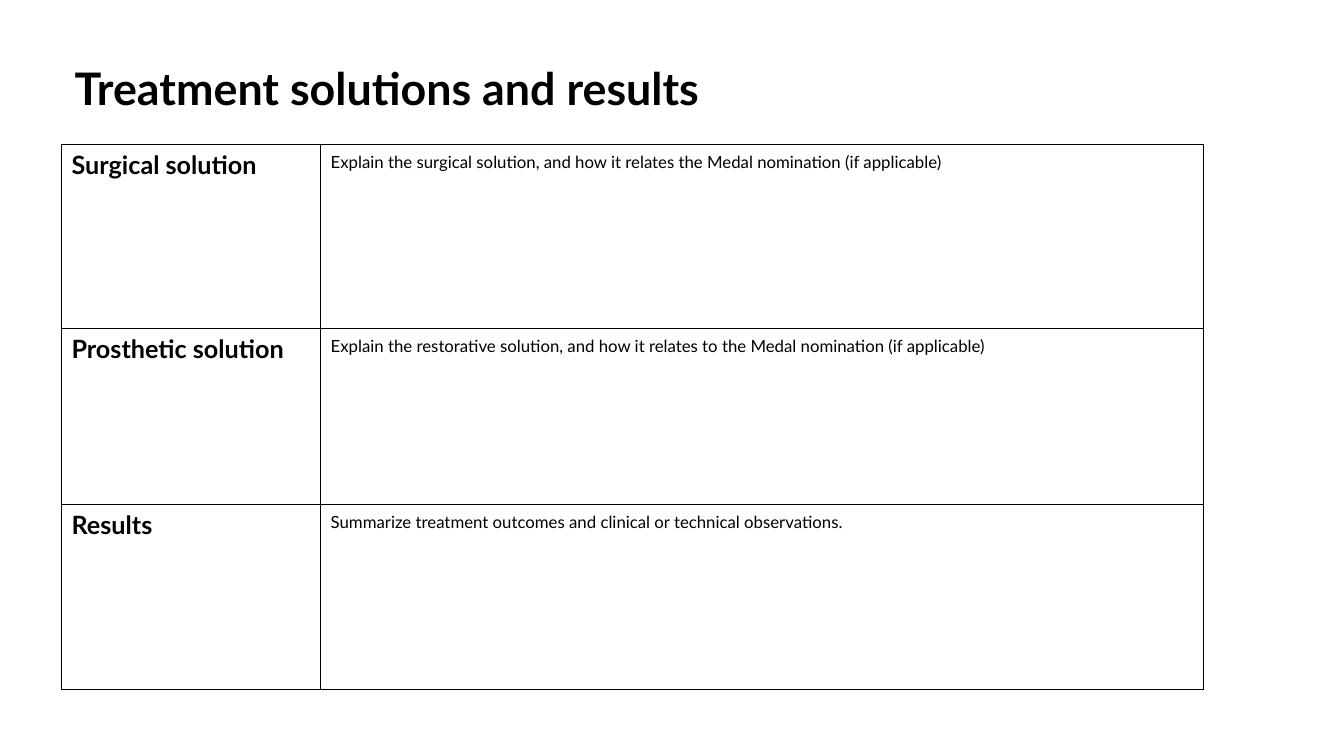
from lxml import etree
from pptx import Presentation
from pptx.dml.color import RGBColor
from pptx.enum.text import MSO_ANCHOR
from pptx.oxml.ns import qn
from pptx.util import Cm, Pt

MIDDLE = MSO_ANCHOR.MIDDLE
BLACK = RGBColor(0x00, 0x00, 0x00)
WHITE = RGBColor(0xFF, 0xFF, 0xFF)

TITLE_FONT = {"name": "Lato", "size": Pt(32), "bold": True}
LABEL_FONT = {"name": "Lato", "size": Pt(18), "bold": True}
PROMPT_FONT = {"name": "Lato", "size": Pt(12), "bold": False}

COLUMN_WIDTHS = [6.53, 22.25]
ROW_HEIGHTS = [4.64, 4.43, 4.67]
SECTIONS = [
    ("Surgical solution",
     "Explain the surgical solution, and how it relates the Medal nomination (if applicable)"),
    ("Prosthetic solution",
     "Explain the restorative solution, and how it relates to the Medal nomination (if applicable)"),
    ("Results",
     "Summarize treatment outcomes and clinical or technical observations."),
]


def write_text(tf, text, font):
    p = tf.paragraphs[0]
    r = p.add_run()
    r.text = text
    for name, value in font.items():
        setattr(r.font, name, value)
    r.font.color.rgb = BLACK
    return p


def add_title(s, text):
    sp = s.shapes.add_textbox(Cm(1.88), Cm(1.47), Cm(18.44), Cm(1.47))
    tf = sp.text_frame
    layout = {"word_wrap": True, "vertical_anchor": MIDDLE, "margin_left": 0,
              "margin_right": 0, "margin_top": 0, "margin_bottom": 0}
    for name, value in layout.items():
        setattr(tf, name, value)
    write_text(tf, text, TITLE_FONT)


def set_borders(cell):
    tc_pr = cell._tc.get_or_add_tcPr()
    for i, side in enumerate(("lnL", "lnR", "lnT", "lnB")):
        ln = etree.Element(qn(f"a:{side}"), w=str(Pt(1)))
        fill = etree.SubElement(ln, qn("a:solidFill"))
        etree.SubElement(fill, qn("a:srgbClr"), val=str(BLACK))
        tc_pr.insert(i, ln)


def add_sections(s):
    frame = s.shapes.add_table(len(SECTIONS), len(COLUMN_WIDTHS), Cm(1.55), Cm(3.64),
                               Cm(sum(COLUMN_WIDTHS)), Cm(sum(ROW_HEIGHTS)))
    table = frame.table
    table.first_row = False
    table.horz_banding = False
    for column, width in zip(table.columns, COLUMN_WIDTHS):
        column.width = Cm(width)
    for row, height, (label, prompt) in zip(table.rows, ROW_HEIGHTS, SECTIONS):
        row.height = Cm(height)
        label_cell, prompt_cell = row.cells
        write_text(label_cell.text_frame, label, LABEL_FONT)
        p = write_text(prompt_cell.text_frame, prompt, PROMPT_FONT)
        p.line_spacing = Pt(16)
        for cell in (label_cell, prompt_cell):
            cell.fill.solid()
            cell.fill.fore_color.rgb = WHITE
            set_borders(cell)


def main():
    prs = Presentation()
    prs.slide_width = Cm(33.87)
    prs.slide_height = Cm(19.05)
    s = prs.slides.add_slide(prs.slide_layouts[6])
    add_title(s, "Treatment solutions and results")
    add_sections(s)
    prs.save("out.pptx")


if __name__ == "__main__":
    main()
